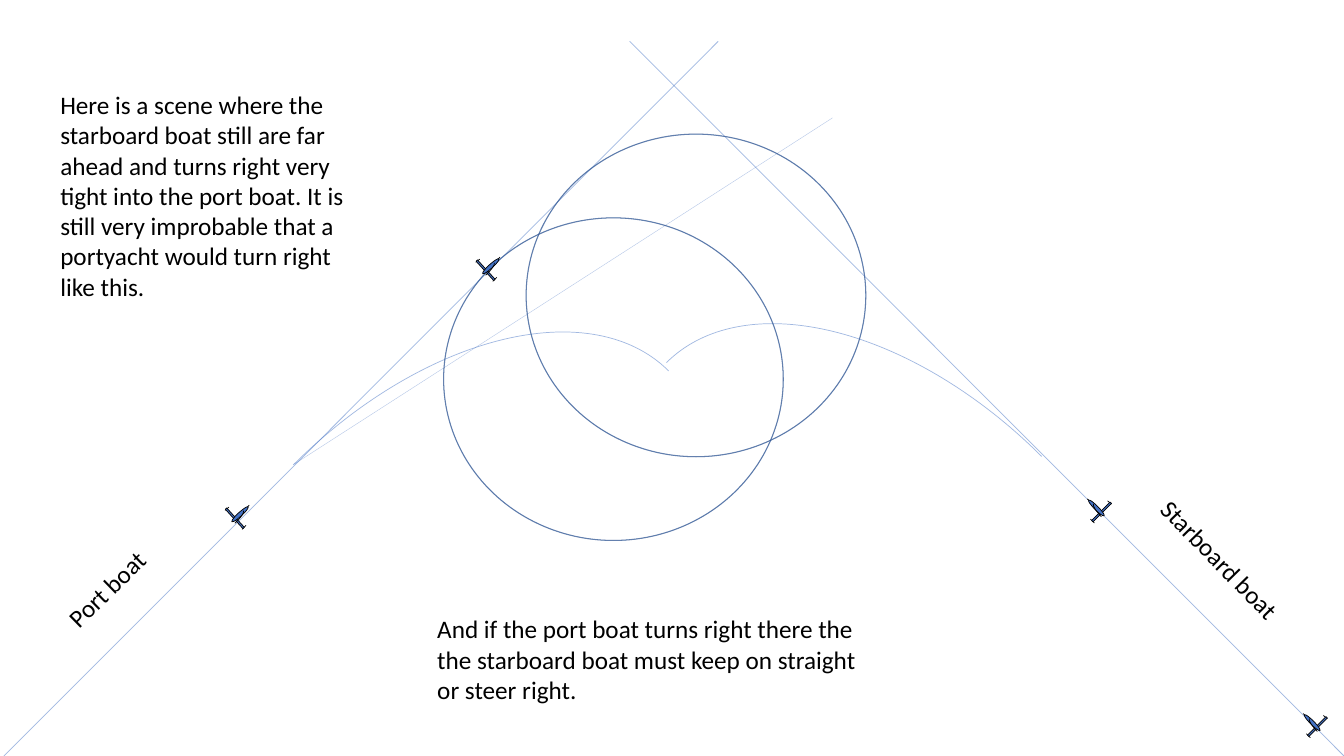
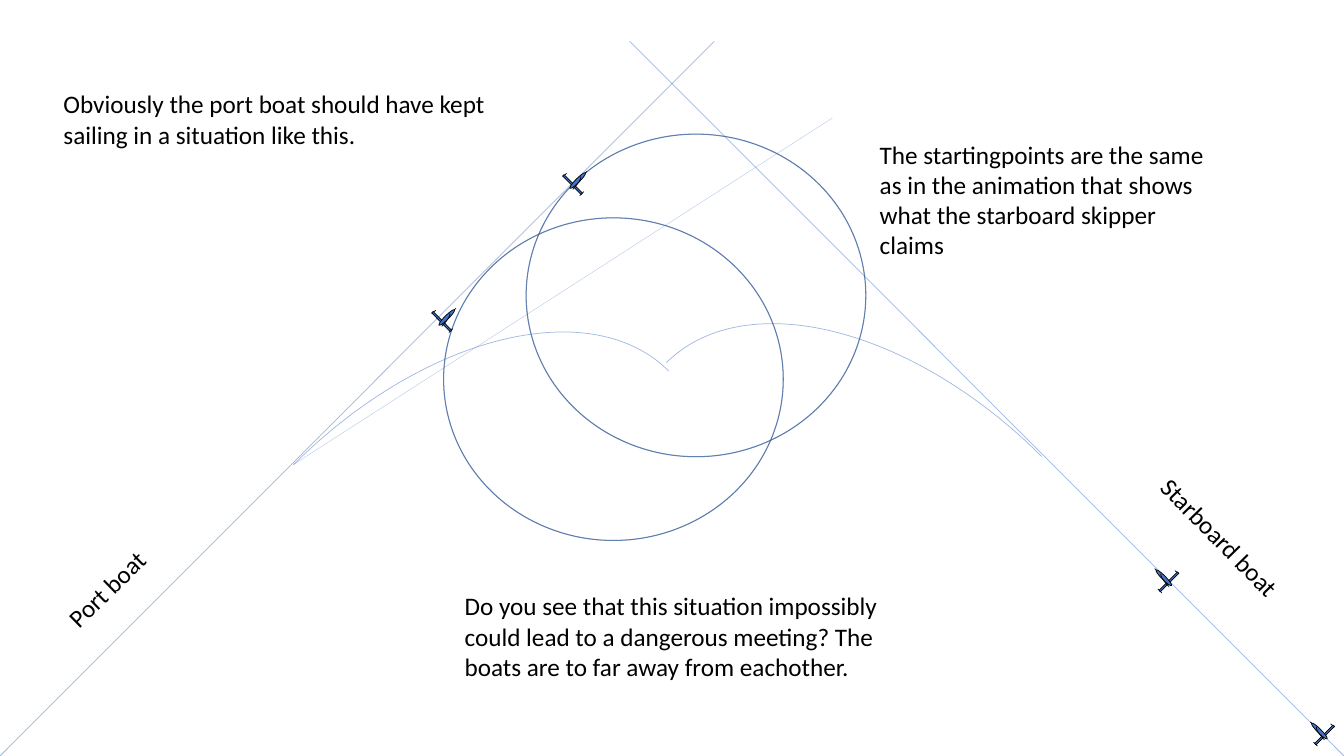
from lxml import etree
from pptx import Presentation
from pptx.dml.color import RGBColor
from pptx.enum.shapes import MSO_CONNECTOR, MSO_SHAPE
from pptx.enum.text import MSO_AUTO_SIZE
from pptx.oxml.ns import qn
from pptx.util import Cm, Pt

STRAIGHT = MSO_CONNECTOR.STRAIGHT
ARC, DONUT = MSO_SHAPE.ARC, MSO_SHAPE.DONUT
OVAL, RECTANGLE = MSO_SHAPE.OVAL, MSO_SHAPE.RECTANGLE
GROW = MSO_AUTO_SIZE.SHAPE_TO_FIT_TEXT

WIDTH, HEIGHT = 33.87, 19.05
BLACK, BLUE, RING_BLUE, RING_FILL = "000000", "4472C4", "325491", "0070C0"
FONT = "Calibri"
PORT, STARBOARD = 1, -1
TRACK_RUN, TRACK_TOP = 18, 1.04
RING_SIZE = (8.56, 8.13)
TURN_SIZE = (16.71, 10.03)
STARBOARD_TILT = 45.2


def color(value):
    return RGBColor.from_string(value)


def style_line(line, value, width, opacity=100):
    line.width = Pt(width)
    line.color.rgb = color(value)
    if opacity < 100:
        for color_element in line.fill._xPr.iter(qn("a:srgbClr")):
            alpha = etree.SubElement(color_element, qn("a:alpha"))
            alpha.set("val", str(opacity * 1000))


def add_line(shapes, start, end, value, width, opacity=100):
    points = [Cm(length) for length in (*start, *end)]
    connector = shapes.add_connector(STRAIGHT, *points)
    style_line(connector.line, value, width, opacity)
    etree.SubElement(connector.element.spPr, qn("a:effectLst"))


def add_outline(shapes, kind, box, line, fill=None, rotation=0, mirrored=False):
    shape = shapes.add_shape(kind, *(Cm(length) for length in box))
    shape.shadow.inherit = False
    shape.rotation = rotation % 360
    if fill:
        shape.fill.solid()
        shape.fill.fore_color.rgb = color(fill)
    else:
        shape.fill.background()
    style_line(shape.line, *line)
    if mirrored:
        shape.element.spPr.xfrm.set("flipH", "1")
    return shape


def add_text(slide, box, text, rotation=0):
    text_box = slide.shapes.add_textbox(*(Cm(length) for length in box))
    text_box.rotation = rotation % 360
    frame = text_box.text_frame
    frame.word_wrap = True
    frame.auto_size = GROW
    paragraph = frame.paragraphs[0]
    paragraph.text = text
    paragraph.font.name = FONT
    paragraph.font.size = Pt(18)
    paragraph.font.color.rgb = color(BLACK)


def add_boat(slide, center, side, tilt):
    shapes = slide.shapes.add_group_shape().shapes
    center_x, center_y = center

    def place(offset_x, offset_y):
        return center_x + side * offset_x, center_y + offset_y

    tips = (
        ((-0.25, -0.2), (-0.15, -0.28)),
        ((0.18, 0.28), (0.28, 0.18)),
        ((0.25, -0.23), (0.36, -0.33)),
    )
    for start, end in tips:
        add_line(shapes, place(*start), place(*end), BLACK, 0.5)
    parts = (
        (RECTANGLE, (0, 0), (0.05, 0.66), BLUE, -tilt),
        (OVAL, (0.13, -0.1), (0.56, 0.1), BLUE, -tilt),
        (ARC, (-0.06, 0.06), (0.18, 0.74), None, 90 - tilt),
    )
    for kind, offset, (width, height), fill, rotation in parts:
        x, y = place(*offset)
        box = (x - width / 2, y - height / 2, width, height)
        add_outline(shapes, kind, box, (BLACK, 0.5), fill, side * rotation, side == STARBOARD)


def add_course(slide, port_start):
    shapes = slide.shapes
    for start, side in ((port_start, PORT), (WIDTH, STARBOARD)):
        end = (start + side * TRACK_RUN, TRACK_TOP)
        add_line(shapes, (start, HEIGHT), end, BLUE, 0.5, 50)
    add_line(shapes, (7.39, 11.71), (20.98, 2.97), BLUE, 0.25, 42)
    for corner, side in (((2.59, 10.24), PORT), ((14.35, 10.03), STARBOARD)):
        add_outline(shapes, ARC, (*corner, *TURN_SIZE), (BLUE, 0.5, 50),
                    rotation=-45 * side, mirrored=side == STARBOARD)
    for corner in ((11.18, 5.49), (13.26, 3.38)):
        ring = add_outline(shapes, DONUT, (*corner, *RING_SIZE), (RING_BLUE, 0.75, 46), RING_FILL)
        ring.adjustments[0] = 0


def add_scene(presentation, port_start, port_tilt, port_boats, starboard_boats,
              starboard_label_top, captions):
    slide = presentation.slides.add_slide(presentation.slide_layouts[6])
    add_course(slide, port_start)
    for center in port_boats:
        add_boat(slide, center, PORT, port_tilt)
    for center in starboard_boats:
        add_boat(slide, center, STARBOARD, STARBOARD_TILT)
    add_text(slide, (0.89, 13.49, 5.31, 1.02), "Port boat", -44.2)
    add_text(slide, (28.47, starboard_label_top, 4.93, 1.02), "Starboard boat", 45.6)
    for box, text in captions:
        add_text(slide, box, text)


def main():
    presentation = Presentation()
    presentation.slide_width = Cm(WIDTH)
    presentation.slide_height = Cm(HEIGHT)
    add_scene(
        presentation,
        port_start=0.1,
        port_tilt=42.3,
        port_boats=((5.92, 13.06), (12.24, 6.81)),
        starboard_boats=((33.2, 18.31), (27.76, 12.9)),
        starboard_label_top=13.79,
        captions=(
            ((1.27, 2.13, 7.8, 5.64),
             "Here is a scene where the starboard boat still are far ahead and turns right "
             "very tight into the port boat. It is still very improbable that a portyacht "
             "would turn right like this."),
            ((10.77, 15.34, 11.56, 2.57),
             "And if the port boat turns right there the the starboard boat must keep on "
             "straight or steer right."),
        ),
    )
    add_scene(
        presentation,
        port_start=0,
        port_tilt=44.9,
        port_boats=((11.13, 8.1), (14.43, 4.65)),
        starboard_boats=((33.38, 18.52), (29.46, 14.66)),
        starboard_label_top=13.23,
        captions=(
            ((1.35, 2.11, 11.15, 1.8),
             "Obviously the port boat should have kept sailing in a situation like this."),
            ((11.46, 14.76, 11.33, 2.57),
             "Do you see that this situation impossibly could lead to a dangerous meeting? "
             "The boats are to far away from eachother."),
            ((21.92, 3.38, 9.02, 3.33),
             "The startingpoints are the same as in the animation that shows what the "
             "starboard skipper claims"),
        ),
    )
    presentation.save("out.pptx")


if __name__ == "__main__":
    main()
